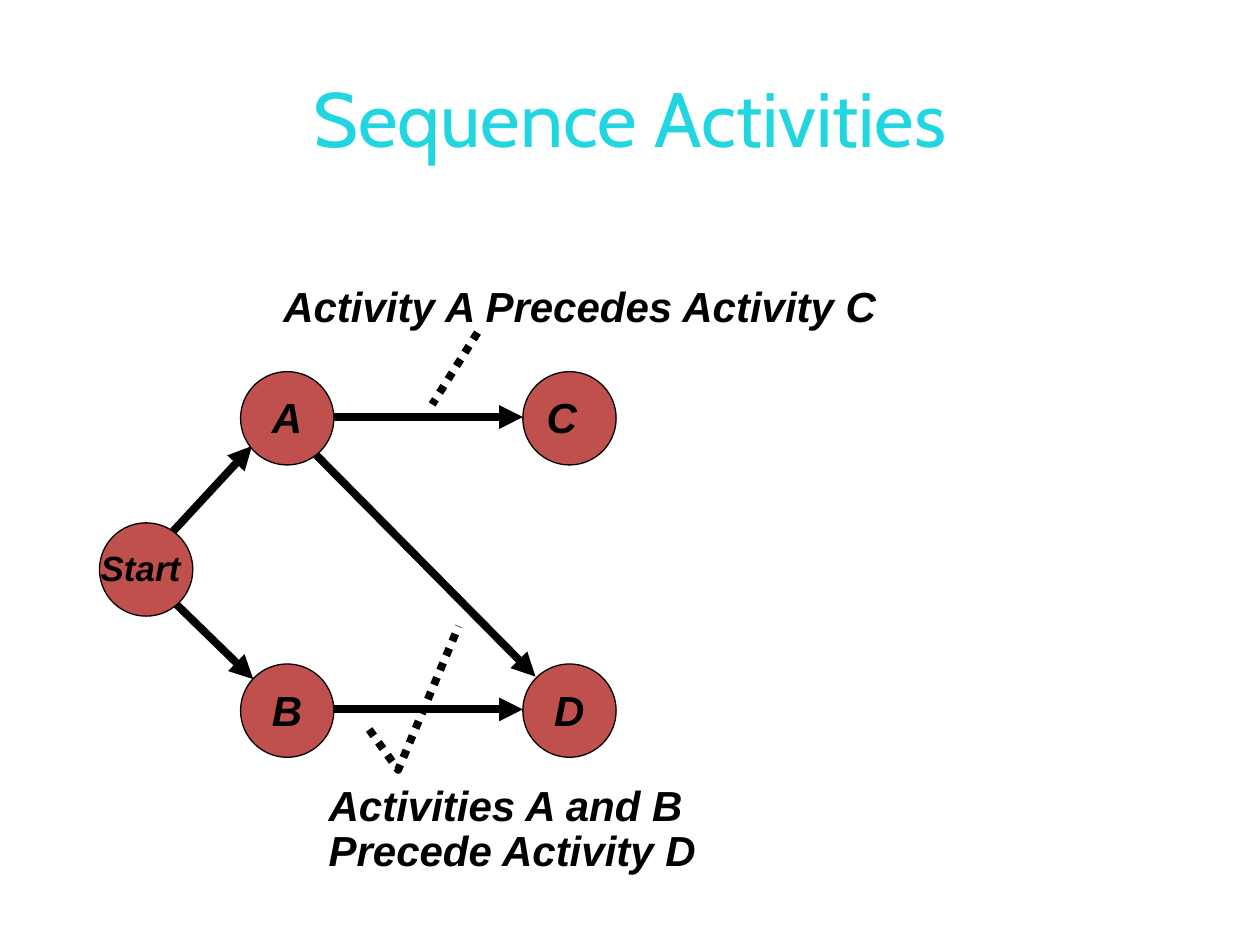
from lxml.etree import SubElement
from pptx import Presentation
from pptx.dml.color import RGBColor
from pptx.enum.dml import MSO_LINE
from pptx.enum.shapes import MSO_CONNECTOR, MSO_SHAPE
from pptx.enum.text import MSO_ANCHOR, PP_ALIGN
from pptx.oxml.ns import qn
from pptx.util import Pt

PX = 9144
COLORS = {"title": "21D6E0", "node": "C0504D", "ink": "000000"}
LABEL = {"name": "Arial", "size": Pt(24), "bold": True, "italic": True}
TITLE = {"name": "Cabin", "size": Pt(44), "bold": False}
NODE = 74
NODES = {
    "Start": ((9, 120), (-9, 14, 104, 44), 20),
    "A": ((121, 0), (15, 11, 44, 50), 24),
    "B": ((121, 232), (15, 11, 44, 50), 24),
    "C": ((345, 0), (9, 11, 56, 50), 24),
    "D": ((345, 232), (15, 11, 44, 50), 24),
}
ARROWS = [
    ((56, 139), (130, 59)),
    ((57, 172), (131, 244)),
    ((179, 36), (345, 36)),
    ((170, 55), (355, 242)),
    ((178, 268), (345, 268)),
]


def rgb(key):
    """Return the named colour."""
    return RGBColor.from_string(COLORS[key])


def emu(*lengths):
    """Turn px lengths into EMU."""
    return [n * PX for n in lengths]


def set_font(r, color, **formats):
    """Apply font attributes and a colour to a run."""
    for key, value in formats.items():
        setattr(r.font, key, value)
    r.font.color.rgb = rgb(color)


def set_line(sp, width, dash=None):
    """Give a shape or connector an ink outline."""
    sp.line.color.rgb = rgb("ink")
    sp.line.width = Pt(width)
    if dash:
        sp.line.dash_style = dash


def add_label(shapes, text, box, size=24, wrap=True, spacing=None):
    """Add a bold italic text box."""
    tf = shapes.add_textbox(*emu(*box)).text_frame
    tf.word_wrap = wrap
    p = tf.paragraphs[0]
    p.line_spacing = spacing
    r = p.add_run()
    r.text = text
    set_font(r, "ink", **{**LABEL, "size": Pt(size)})


def add_line(shapes, start, end, dash=None, arrow=False):
    """Add a thick straight connector, with an arrowhead if asked."""
    c = shapes.add_connector(MSO_CONNECTOR.STRAIGHT, *emu(*start, *end))
    set_line(c, 4.5, dash)
    if arrow:
        SubElement(c.line._get_or_add_ln(), qn("a:tailEnd"), type="triangle")
    SubElement(c._element.spPr, qn("a:effectLst"))


def add_title(s, text, box):
    """Fill and place the title placeholder."""
    sp = s.shapes.title
    for key, value in zip(("left", "top", "width", "height"), emu(*box)):
        setattr(sp, key, value)
    tf = sp.text_frame
    tf.vertical_anchor = MSO_ANCHOR.MIDDLE
    p = tf.paragraphs[0]
    p.alignment = PP_ALIGN.CENTER
    r = p.add_run()
    r.text = text
    set_font(r, "title", **TITLE)


def add_network(s, x, y):
    """Draw the activity network from its top left corner."""
    shapes = s.shapes.add_group_shape().shapes
    for start, end in ARROWS:
        add_line(shapes, (x + start[0], y + start[1]),
                 (x + end[0], y + end[1]), arrow=True)
    for text, ((dx, dy), (lx, ly, w, h), size) in NODES.items():
        left, top = x + dx, y + dy
        sp = shapes.add_shape(MSO_SHAPE.OVAL, *emu(left, top, NODE, NODE))
        sp.shadow.inherit = False
        sp.fill.solid()
        sp.fill.fore_color.rgb = rgb("node")
        set_line(sp, 0.75)
        add_label(shapes, text, (left + lx, top + ly, w, h), size)


def add_caption(s, text, box, leader, wrap=True, spacing=None):
    """Add a caption with a dotted leader given relative to its box."""
    shapes = s.shapes.add_group_shape().shapes
    add_label(shapes, text, box, wrap=wrap, spacing=spacing)
    points = [(box[0] + dx, box[1] + dy) for dx, dy in leader]
    if len(points) == 2:
        add_line(shapes, *points, dash=MSO_LINE.ROUND_DOT)
        return
    fb = shapes.build_freeform(*points[0], scale=PX)
    fb.add_line_segments(points[1:], close=False)
    sp = fb.convert_to_shape()
    sp.shadow.inherit = False
    sp.fill.background()
    set_line(sp, 4.5, MSO_LINE.ROUND_DOT)


def main():
    """Build and save the slide."""
    prs = Presentation()
    prs.slide_width, prs.slide_height = emu(1000, 750)
    s = prs.slides.add_slide(prs.slide_layouts[5])
    add_title(s, "Sequence Activities", (50, 30, 900, 125))
    add_network(s, 70, 295)
    add_caption(s, "Activity A Precedes Activity C", (215, 218, 495, 50),
                [(164, 46), (128, 103)], wrap=False)
    add_caption(s, "Activities A and B Precede Activity D", (251, 618, 357, 82),
                [(42, -39), (65, -7), (113, -121)], spacing=0.9)
    prs.save("out.pptx")


if __name__ == "__main__":
    main()
